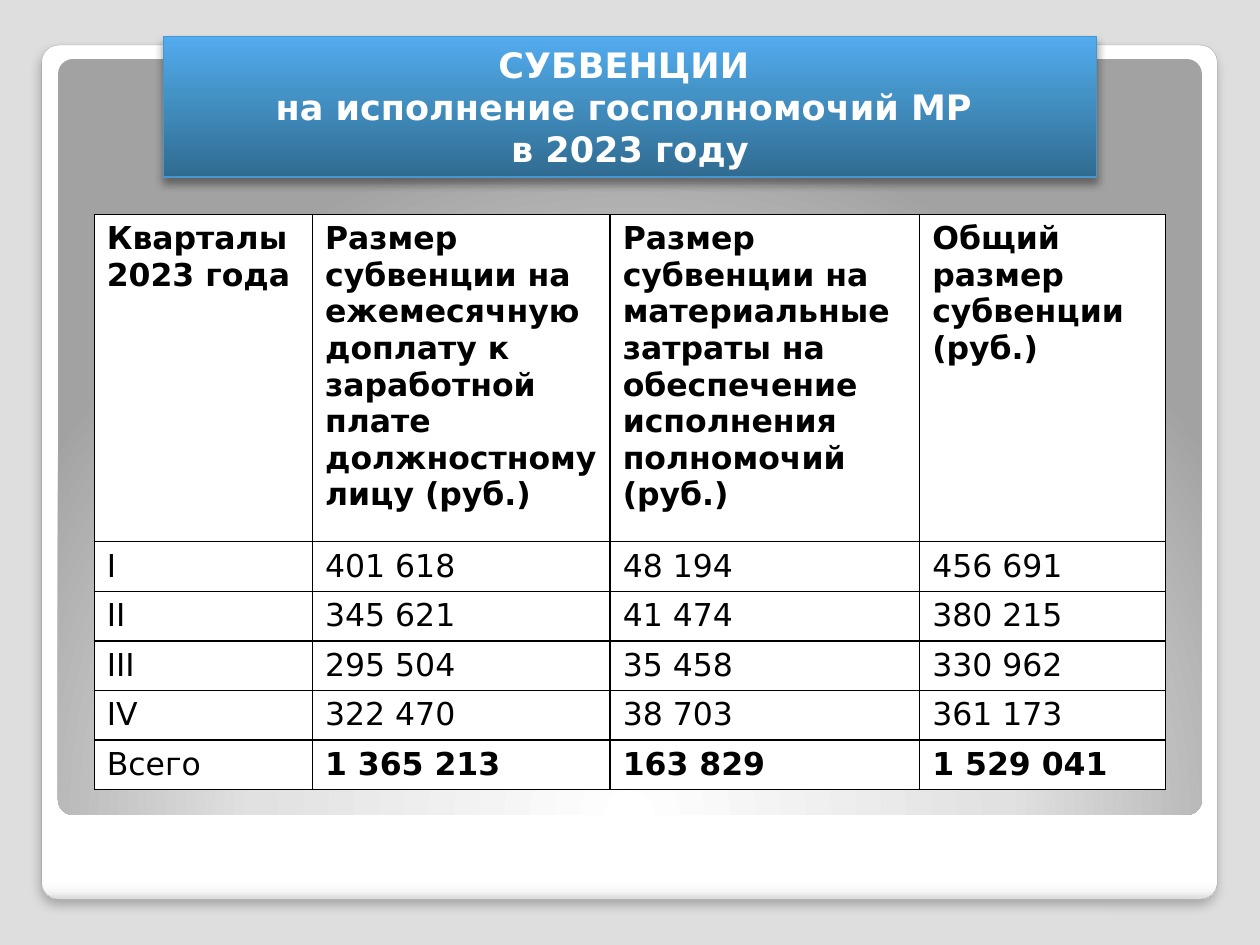
from lxml import etree
from pptx import Presentation
from pptx.dml.color import RGBColor
from pptx.enum.shapes import MSO_SHAPE
from pptx.enum.text import MSO_ANCHOR, MSO_AUTO_SIZE, PP_ALIGN
from pptx.oxml.ns import qn
from pptx.util import Cm, Pt

ROUNDED = MSO_SHAPE.ROUNDED_RECTANGLE
MIDDLE = MSO_ANCHOR.MIDDLE
NO_FIT = MSO_AUTO_SIZE.NONE
LEFT, CENTER = PP_ALIGN.LEFT, PP_ALIGN.CENTER
FONT = "DejaVu Sans"
COLORS = {
    "background": "DEDEDE",
    "white": "FFFFFF",
    "black": "000000",
    "frame_line": "A4A4A4",
    "frame_low": "F7F7F7",
    "frame_edge": "DADADA",
    "panel_mid": "E1E1E1",
    "panel_edge": "A2A2A2",
    "title_dark": "306B91",
    "title_mid": "4493C7",
    "title_light": "53ACF0",
    "title_line": "4697CB",
}
TITLE = "СУБВЕНЦИИ \nна исполнение госполномочий МР \nв 2023 году"
ROWS = [
    ["Кварталы 2023 года",
     "Размер субвенции на ежемесячную доплату к заработной плате должностному лицу (руб.)",
     "Размер субвенции на материальные затраты на обеспечение исполнения полномочий (руб.)",
     "Общий размер субвенции (руб.)"],
    ["I", "401 618", "48 194", "456 691"],
    ["II", "345 621", "41 474", "380 215"],
    ["III", "295 504", "35 458", "330 962"],
    ["IV", "322 470", "38 703", "361 173"],
    ["Всего", "1 365 213", "163 829", "1 529 041"],
]
COL_WIDTHS = [4.4, 6, 6.24, 4.96]
HEADER_HEIGHT, ROW_HEIGHT = 6.6, 1


def rgb(name):
    return RGBColor.from_string(COLORS[name])


def add_node(parent, tag, **attrs):
    values = {key: str(value) for key, value in attrs.items()}
    return etree.SubElement(parent, qn(tag), values)


def add_color(parent, name):
    return add_node(parent, "a:srgbClr", val=COLORS[name])


def set_text(tf, text, size=18, color="black", bold=False, align=LEFT):
    p = tf.paragraphs[0]
    p.alignment = align
    for i, line in enumerate(text.split("\n")):
        if i:
            p.add_line_break()
        r = p.add_run()
        r.text = line
        r.font.name = FONT
        r.font.size = Pt(size)
        r.font.bold = bold
        r.font.color.rgb = rgb(color)


def set_gradient(sp, stops, angle=None):
    sp.fill.gradient()
    grad = sp._element.spPr.find(qn("a:gradFill"))
    for child in list(grad):
        grad.remove(child)
    gs_list = add_node(grad, "a:gsLst")
    for pos, name in stops:
        add_color(add_node(gs_list, "a:gs", pos=pos * 1000), name)
    if angle is None:
        circle = add_node(grad, "a:path", path="circle")
        add_node(circle, "a:fillToRect", l=50000, t=175000, r=50000, b=-75000)
    else:
        add_node(grad, "a:lin", ang=angle * 60000, scaled=0)


def set_line(sp, color, width):
    sp.line.color.rgb = rgb(color)
    sp.line.width = Pt(width)


def set_shadow(sp, alpha, blur, dist):
    sp.shadow.inherit = False
    effects = sp._element.spPr.find(qn("a:effectLst"))
    shadow = add_node(effects, "a:outerShdw", blurRad=Pt(blur), dist=Pt(dist),
                      dir=5400000, algn="t", rotWithShape=0)
    add_node(add_color(shadow, "black"), "a:alpha", val=alpha * 1000)


def add_rounded(s, left, top, width, height):
    sp = s.shapes.add_shape(ROUNDED, Cm(left), Cm(top), Cm(width), Cm(height))
    sp.adjustments[0] = 0.02
    sp.shadow.inherit = False
    return sp


def add_backdrop(s):
    frame = add_rounded(s, 0.84, 0.91, 23.7, 17.22)
    set_gradient(frame, [(0, "white"), (98, "white"), (99, "frame_low"),
                         (100, "frame_edge")], 90)
    set_line(frame, "frame_line", 0.16)
    set_shadow(frame, 25, 6, 4)
    panel = add_rounded(s, 1.17, 1.19, 23.06, 15.24)
    set_gradient(panel, [(0, "white"), (55, "panel_mid"), (100, "panel_edge")])
    panel.line.fill.background()


def set_borders(cell):
    tc_pr = cell._tc.get_or_add_tcPr()
    for i, side in enumerate(("a:lnL", "a:lnR", "a:lnT", "a:lnB")):
        ln = etree.Element(qn(side), w=str(Pt(1)))
        add_color(add_node(ln, "a:solidFill"), "black")
        tc_pr.insert(i, ln)


def add_grid(s):
    height = HEADER_HEIGHT + ROW_HEIGHT * (len(ROWS) - 1)
    table = s.shapes.add_table(len(ROWS), len(COL_WIDTHS), Cm(1.9), Cm(4.32),
                               Cm(sum(COL_WIDTHS)), Cm(height)).table
    for col, width in zip(table.columns, COL_WIDTHS):
        col.width = Cm(width)
    last = len(ROWS) - 1
    for i, values in enumerate(ROWS):
        table.rows[i].height = Cm(ROW_HEIGHT if i else HEADER_HEIGHT)
        for j, text in enumerate(values):
            cell = table.cell(i, j)
            cell.fill.solid()
            cell.fill.fore_color.rgb = rgb("white")
            set_borders(cell)
            set_text(cell.text_frame, text, bold=i == 0 or (i == last and j > 0))


def add_title(s):
    sp = s.shapes.title
    sp.left, sp.top, sp.width, sp.height = Cm(3.3), Cm(0.73), Cm(18.8), Cm(2.84)
    set_gradient(sp, [(0, "title_dark"), (60, "title_mid"),
                      (100, "title_light")], 270)
    set_line(sp, "title_line", 0.75)
    set_shadow(sp, 40, 5.2, 3)
    tf = sp.text_frame
    tf.word_wrap = True
    tf.auto_size = NO_FIT
    tf.vertical_anchor = MIDDLE
    set_text(tf, TITLE, size=20, color="white", bold=True, align=CENTER)
    s.shapes._spTree.append(sp._element)


def main():
    prs = Presentation()
    prs.slide_width, prs.slide_height = Cm(25.4), Cm(19.05)
    s = prs.slides.add_slide(prs.slide_layouts[5])
    s.background.fill.solid()
    s.background.fill.fore_color.rgb = rgb("background")
    add_backdrop(s)
    add_grid(s)
    add_title(s)
    prs.save("out.pptx")


if __name__ == "__main__":
    main()
